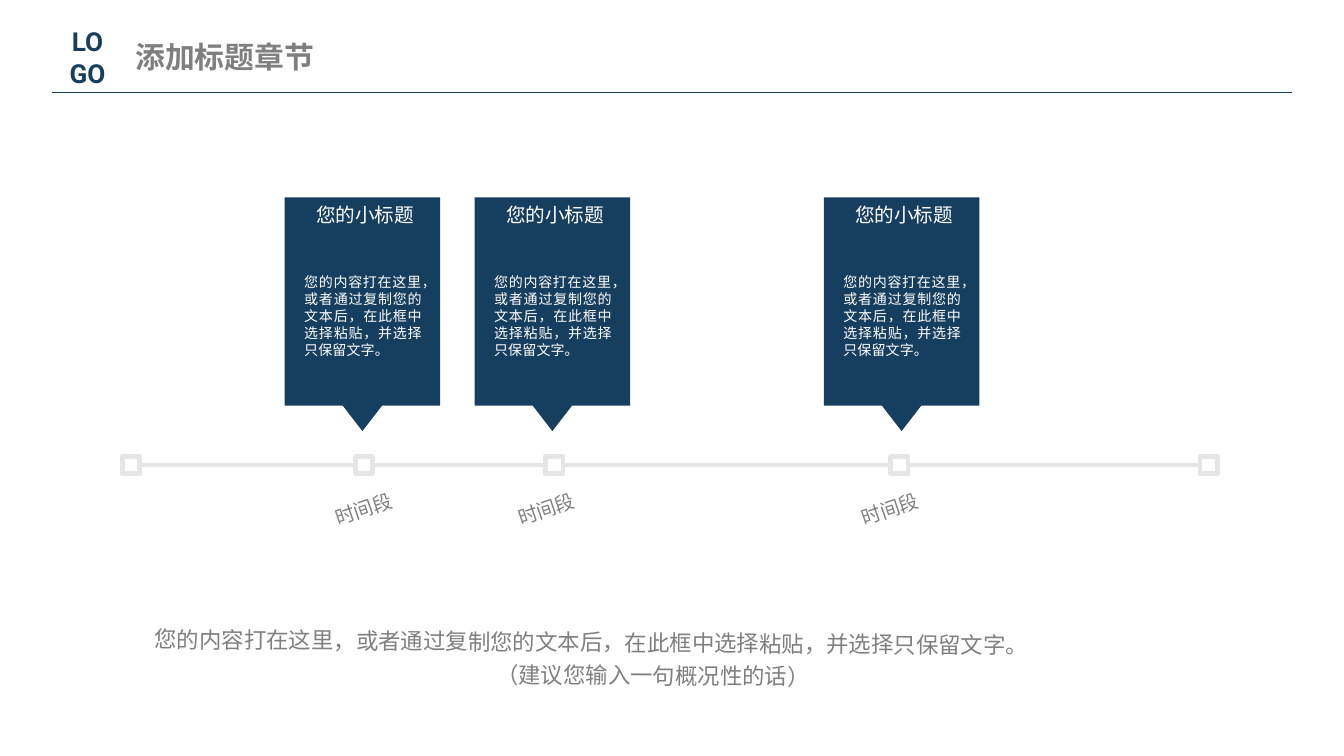
from lxml import etree
from pptx import Presentation
from pptx import util as u
from pptx.dml.color import RGBColor
from pptx.enum import shapes, text
from pptx.oxml.ns import qn

CJK = "Noto Sans CJK SC"
NAVY, GRAY, PALE, WHITE = "163E5F", "7F7F7F", "E5E5E5", "FFFFFF"
LEFT, CENTER, JUSTIFY = text.PP_ALIGN.LEFT, text.PP_ALIGN.CENTER, text.PP_ALIGN.JUSTIFY
CONTENT = "您的内容打在这里，或者通过复制您的文本后，在此框中选择粘贴，并选择只保留文字。"
CARD_TOP, CARD_BOTTOM, CARD_TIP = 3.73, 7.67, 8.15
CARD_WIDTH, TIP_HALF = 2.94, 0.37
AXIS_Y, AXIS_START, AXIS_END = 8.79, 2.31, 23.01
MARKER = 0.33
STAGES = [(5.38, 6.88, 5.72), (8.97, 10.48, 9.17), (15.57, 17.0, 15.67)]


def color(value):
    return RGBColor.from_string(value)


def add_run(paragraph, content, size, ink, font=CJK, bold=False):
    run = paragraph.add_run()
    run.text = content
    run.font.size = u.Pt(size)
    run.font.bold = bold
    run.font.color.rgb = color(ink)
    run.font.name = font
    properties = run.font._element
    etree.SubElement(properties, qn("a:ea")).set("typeface", font)


def add_text(slide, box, lines, size, ink, font=CJK, bold=False,
             spacing=None, wrap=True, rotation=0):
    shape = slide.shapes.add_textbox(*map(u.Cm, box))
    shape.rotation = rotation
    frame = shape.text_frame
    frame.word_wrap = wrap
    frame.auto_size = text.MSO_AUTO_SIZE.SHAPE_TO_FIT_TEXT
    for index, (content, alignment) in enumerate(lines):
        paragraph = frame.add_paragraph() if index else frame.paragraphs[0]
        paragraph.alignment = alignment
        paragraph.line_spacing = spacing
        add_run(paragraph, content, size, ink, font, bold)


def add_line(slide, start, end, y, ink, width):
    line = slide.shapes.add_connector(
        shapes.MSO_CONNECTOR.STRAIGHT, u.Cm(start), u.Cm(y), u.Cm(end), u.Cm(y))
    line.line.color.rgb = color(ink)
    line.line.width = u.Pt(width)
    etree.SubElement(line._element.spPr, qn("a:effectLst"))


def paint(shape, fill):
    shape.shadow.inherit = False
    shape.fill.solid()
    shape.fill.fore_color.rgb = color(fill)
    shape.line.fill.background()


def add_marker(slide, center):
    half = MARKER / 2
    marker = slide.shapes.add_shape(
        shapes.MSO_SHAPE.RECTANGLE, u.Cm(center - half), u.Cm(AXIS_Y - half),
        u.Cm(MARKER), u.Cm(MARKER))
    paint(marker, WHITE)
    marker.line.color.rgb = color(PALE)
    marker.line.width = u.Pt(2.5)


def add_card(slide, left):
    right, middle = left + CARD_WIDTH, left + CARD_WIDTH / 2
    outline = [(right, CARD_TOP), (right, CARD_BOTTOM),
               (middle + TIP_HALF, CARD_BOTTOM), (middle, CARD_TIP),
               (middle - TIP_HALF, CARD_BOTTOM), (left, CARD_BOTTOM)]
    builder = slide.shapes.build_freeform(u.Cm(left), u.Cm(CARD_TOP))
    builder.add_line_segments([(u.Cm(x), u.Cm(y)) for x, y in outline], close=True)
    paint(builder.convert_to_shape(), NAVY)
    add_text(slide, (left + 0.35, 3.71, 2.39, 0.71), [("您的小标题", LEFT)],
             10.5, WHITE, wrap=False)
    add_text(slide, (left + 0.12, 5.05, 2.72, 1.85), [(CONTENT, JUSTIFY)], 7.5, WHITE)


def add_timeline(slide):
    add_line(slide, AXIS_START, AXIS_END, AXIS_Y, PALE, 2.5)
    ends = [AXIS_START + MARKER / 2, AXIS_END - MARKER / 2]
    for center in ends + [stage[1] for stage in STAGES]:
        add_marker(slide, center)
    for card_left, _, label_left in STAGES:
        add_text(slide, (label_left, 9.27, 2.31, 0.71), [("时间段", CENTER)],
                 10.5, GRAY, rotation=341.1)
        add_card(slide, card_left)


def add_header(slide):
    add_line(slide, 0.99, 24.41, 1.75, "143D5F", 0.75)
    add_text(slide, (2.31, 0.61, 4.72, 0.94), [("添加标题章节", LEFT)],
             16, GRAY, bold=True)
    add_text(slide, (0.79, 0.36, 1.73, 1.45), [("LO", CENTER), ("GO", CENTER)],
             14, NAVY, font="Roboto", bold=True)


def main():
    presentation = Presentation()
    presentation.slide_width = u.Cm(25.4)
    presentation.slide_height = u.Cm(14.29)
    slide = presentation.slides.add_slide(presentation.slide_layouts[6])
    add_timeline(slide)
    add_text(slide, (2.67, 11.68, 19.25, 1.5),
             [(CONTENT, JUSTIFY), (" （建议您输入一句概况性的话）", CENTER)],
             12, GRAY, spacing=1.2, rotation=0.5)
    add_header(slide)
    presentation.save("out.pptx")


if __name__ == "__main__":
    main()
